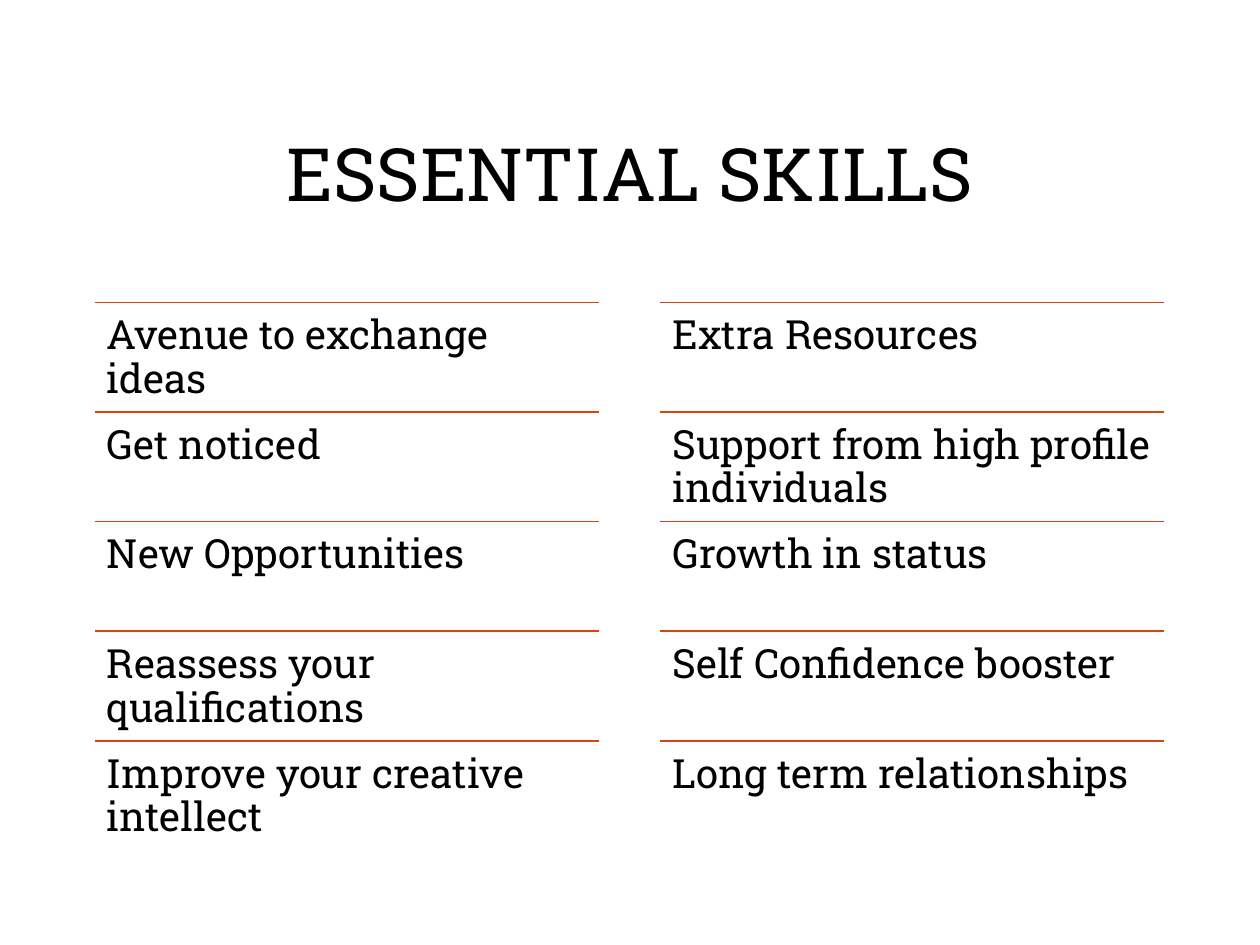
from dataclasses import dataclass

from lxml.etree import SubElement
from pptx import Presentation
from pptx.dml.color import RGBColor
from pptx.enum.shapes import MSO_CONNECTOR as Connector
from pptx.enum.text import MSO_ANCHOR as Anchor, PP_ALIGN as Align
from pptx.oxml.ns import qn
from pptx.slide import Slide
from pptx.util import Inches, Pt

BLACK = RGBColor(0x00, 0x00, 0x00)
ORANGE = RGBColor(0xD3, 0x46, 0x14)
FONT = "Roboto Slab"

COLUMN_TOP = 2.4
COLUMN_WIDTH = 4
ROW_HEIGHT = 0.87


@dataclass(frozen=True)
class SkillColumn:
    left: float
    skills: tuple[str, ...]


@dataclass(frozen=True)
class TextStyle:
    size: float
    inset_y: float
    anchor: Anchor
    align: Align


TITLE_STYLE = TextStyle(42, 0.05, Anchor.MIDDLE, Align.CENTER)
SKILL_STYLE = TextStyle(23, 0.1, Anchor.TOP, Align.LEFT)

COLUMNS = (
    SkillColumn(0.75, (
        "Avenue to exchange ideas",
        "Get noticed",
        "New Opportunities",
        "Reassess your qualifications",
        "Improve your creative intellect",
    )),
    SkillColumn(5.24, (
        "Extra Resources",
        "Support from high profile individuals",
        "Growth in status",
        "Self Confidence booster",
        "Long term relationships",
    )),
)


def add_text(slide: Slide, text: str, left: float, top: float,
             width: float, height: float, style: TextStyle) -> None:
    frame = slide.shapes.add_textbox(
        Inches(left), Inches(top), Inches(width), Inches(height)).text_frame
    frame.word_wrap = True
    frame.vertical_anchor = style.anchor
    frame.margin_left = frame.margin_right = Inches(0.1)
    frame.margin_top = frame.margin_bottom = Inches(style.inset_y)
    paragraph = frame.paragraphs[0]
    paragraph.text = text
    paragraph.alignment = style.align
    paragraph.line_spacing = 0.9
    paragraph.font.name = FONT
    paragraph.font.size = Pt(style.size)
    paragraph.font.color.rgb = BLACK


def add_rule(slide: Slide, left: float, top: float, width: float) -> None:
    rule = slide.shapes.add_connector(
        Connector.STRAIGHT, Inches(left), Inches(top),
        Inches(left + width), Inches(top))
    rule.line.color.rgb = ORANGE
    rule.line.width = Pt(1)
    SubElement(rule._element.spPr, qn("a:effectLst"))


def add_column(slide: Slide, column: SkillColumn) -> None:
    for row, skill in enumerate(column.skills):
        top = COLUMN_TOP + row * ROW_HEIGHT
        add_rule(slide, column.left, top, COLUMN_WIDTH)
        add_text(slide, skill, column.left, top, COLUMN_WIDTH, ROW_HEIGHT,
                 SKILL_STYLE)


def main() -> None:
    deck = Presentation()
    deck.slide_width, deck.slide_height = Inches(10), Inches(7.5)
    slide = deck.slides.add_slide(deck.slide_layouts[6])
    add_text(slide, "ESSENTIAL SKILLS", 0.75, 0.53, 8.5, 1.76, TITLE_STYLE)
    for column in COLUMNS:
        add_column(slide, column)
    deck.save("out.pptx")


if __name__ == "__main__":
    main()
